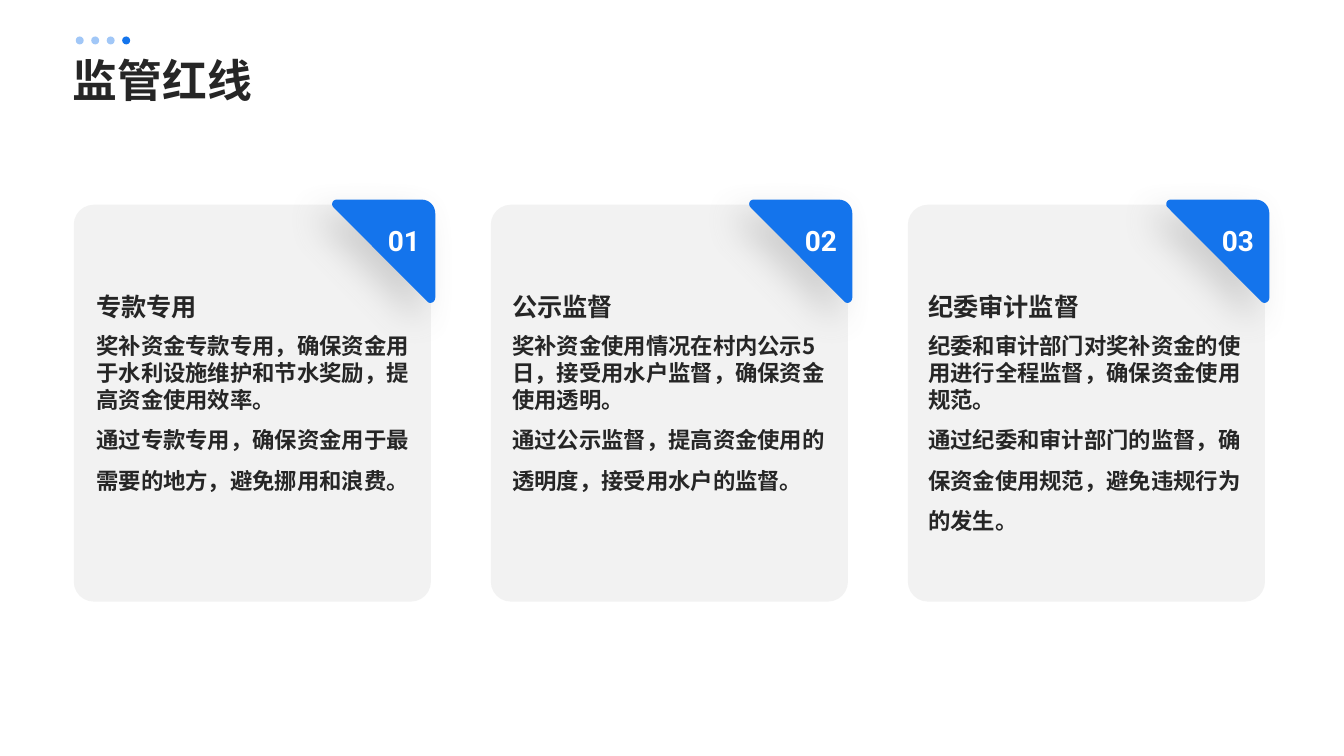
from dataclasses import dataclass

from lxml import etree
from pptx import Presentation
from pptx.dml.color import RGBColor
from pptx.enum import shapes, text
from pptx.oxml import ns
from pptx.util import Cm, Pt


@dataclass(frozen=True)
class Theme:
    blue: str = "1474EC"
    card: str = "F2F2F2"
    ink: str = "262626"
    white: str = "FFFFFF"
    shadow: str = "808080"
    font: str = "Noto Sans CJK SC"
    number_font: str = "Roboto"
    title: int = 32
    number: int = 20
    heading: int = 18
    body: int = 16


THEME = Theme()

CARDS = [
    ("专款专用",
     "奖补资金专款专用，确保资金用于水利设施维护和节水奖励，提高资金使用效率。",
     "通过专款专用，确保资金用于最需要的地方，避免挪用和浪费。"),
    ("公示监督",
     "奖补资金使用情况在村内公示5日，接受用水户监督，确保资金使用透明。",
     "通过公示监督，提高资金使用的透明度，接受用水户的监督。"),
    ("纪委审计监督",
     "纪委和审计部门对奖补资金的使用进行全程监督，确保资金使用规范。",
     "通过纪委和审计部门的监督，确保资金使用规范，避免违规行为的发生。"),
]

# Corner flag in cm: a pair is a straight line's end, a triple of pairs a curve
FLAG_START = (2.24, 0)
FLAG_EDGES = [
    (0.1, 0),
    ((0, 0), (-0.05, 0.13), (0.03, 0.2)),
    (2.39, 2.57),
    ((2.46, 2.64), (2.59, 2.59), (2.59, 2.46)),
    (2.59, 0.36),
    ((2.59, 0.15), (2.44, 0), FLAG_START),
]


def paint(shape, color, alpha=None):
    shape.shadow.inherit = False
    shape.fill.solid()
    shape.fill.fore_color.rgb = RGBColor.from_string(color)
    shape.line.fill.background()
    if alpha is not None:
        fill_color = shape.fill._xPr.find(".//" + ns.qn("a:srgbClr"))
        etree.SubElement(fill_color, ns.qn("a:alpha"), val=str(alpha * 1000))


def cast_shadow(shape):
    effects = shape._element.spPr.find(ns.qn("a:effectLst"))
    outer = etree.SubElement(
        effects, ns.qn("a:outerShdw"), blurRad=str(Pt(25)), dist=str(Pt(15)),
        dir=str(135 * 60000), algn="tr", rotWithShape="0")
    color = etree.SubElement(outer, ns.qn("a:srgbClr"), val=THEME.shadow)
    etree.SubElement(color, ns.qn("a:alpha"), val="30000")


def write(box, lines, size, spacings, color=THEME.ink, font=THEME.font,
          anchor=text.MSO_ANCHOR.TOP, align=text.PP_ALIGN.LEFT):
    frame = box.text_frame
    frame.word_wrap = True
    frame.auto_size = text.MSO_AUTO_SIZE.NONE
    frame.vertical_anchor = anchor
    frame.margin_left = frame.margin_right = 0
    frame.margin_top = frame.margin_bottom = 0
    frame.text = "\n".join(lines)
    for para, spacing in zip(frame.paragraphs, spacings):
        para.alignment = align
        para.line_spacing = spacing
        para.space_before = Pt(0)
        para.font.size = Pt(size)
        para.font.bold = True
        para.font.name = font
        para.font.color.rgb = RGBColor.from_string(color)
        etree.SubElement(para.font._element, ns.qn("a:ea"), typeface=font)


def add_text(page, left, top, width, height, lines, size, spacings, **style):
    box = page.shapes.add_textbox(Cm(left), Cm(top), Cm(width), Cm(height))
    write(box, lines, size, spacings, **style)


def curve_points(start, first, second, end, steps=8):
    for step in range(1, steps + 1):
        t = step / steps
        weights = ((1 - t) ** 3, 3 * t * (1 - t) ** 2, 3 * t * t * (1 - t), t ** 3)
        corners = (start, first, second, end)
        yield tuple(sum(w * c[axis] for w, c in zip(weights, corners))
                    for axis in (0, 1))


def add_flag(page, left, top):
    points = [FLAG_START]
    for edge in FLAG_EDGES:
        if isinstance(edge[0], tuple):
            points.extend(curve_points(points[-1], *edge))
        else:
            points.append(edge)
    outline = [(Cm(left + x), Cm(top + y)) for x, y in points]
    builder = page.shapes.build_freeform(*outline[0])
    builder.add_line_segments(outline[1:], close=True)
    flag = builder.convert_to_shape()
    paint(flag, THEME.blue)
    cast_shadow(flag)


def add_card(page, index, heading, rule, purpose):
    left = 1.86 + 10.51 * index
    card = page.shapes.add_shape(shapes.MSO_SHAPE.ROUNDED_RECTANGLE,
                                 Cm(left), Cm(5.16), Cm(9), Cm(10))
    card.adjustments[0] = 0.056
    paint(card, THEME.card)
    add_flag(page, left + 6.52, 5.03)
    add_text(page, left + 7.52, 5.51, 1.6, 0.99, [f"{index + 1:02}"],
             THEME.number, [1.1], color=THEME.white, font=THEME.number_font,
             anchor=text.MSO_ANCHOR.MIDDLE, align=text.PP_ALIGN.CENTER)
    text_left = 2.43 + 10.48 * index
    add_text(page, text_left, 6.38, 7.38, 1.72, [heading], THEME.heading, [1.3],
             anchor=text.MSO_ANCHOR.BOTTOM)
    add_text(page, text_left, 8.38, 8, 5.51, [rule, purpose], THEME.body, [1, 1.5])


def add_title(page, words):
    title = page.shapes.title
    title.left, title.top, title.width, title.height = (
        Cm(1.83), Cm(1.3), Cm(30.18), Cm(1.3))
    write(title, [words], THEME.title, [1.1], anchor=text.MSO_ANCHOR.MIDDLE)


def add_dots(page, count=4):
    group = page.shapes.add_group_shape()
    for index in range(count):
        dot = group.shapes.add_shape(shapes.MSO_SHAPE.OVAL, Cm(1.91 + 0.39 * index),
                                     Cm(0.92), Cm(0.2), Cm(0.2))
        paint(dot, THEME.blue, None if index == count - 1 else 40)


def main():
    deck = Presentation()
    deck.slide_width, deck.slide_height = Cm(33.87), Cm(19.05)
    page = deck.slides.add_slide(deck.slide_layouts[5])  # title only
    for index, card in enumerate(CARDS):
        add_card(page, index, *card)
    add_title(page, "监管红线")
    add_dots(page)
    deck.save("out.pptx")


if __name__ == "__main__":
    main()
